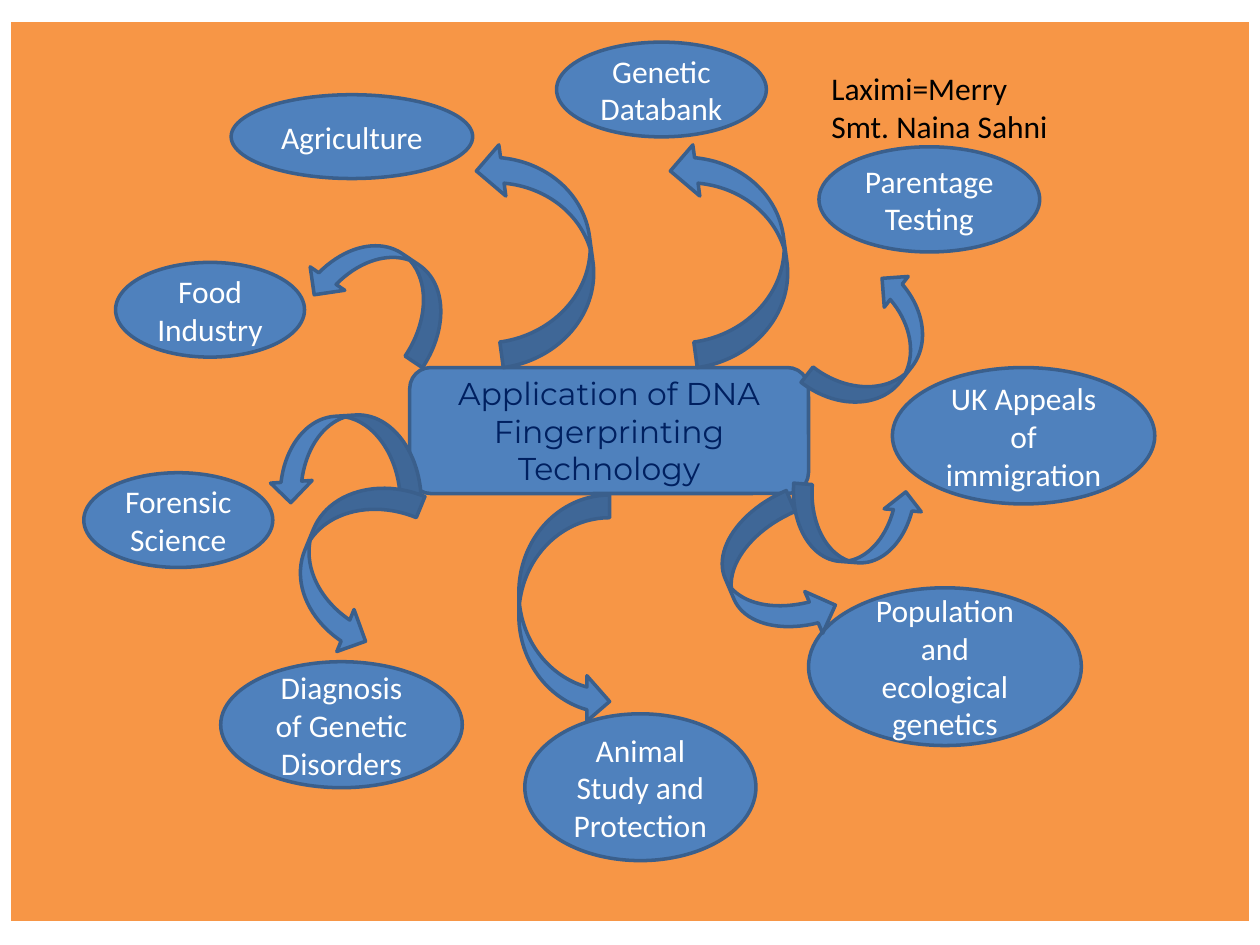
from lxml import etree
from pptx import Presentation
from pptx.dml.color import RGBColor
from pptx.enum.shapes import MSO_SHAPE
from pptx.enum.text import MSO_ANCHOR, MSO_AUTO_SIZE, PP_ALIGN
from pptx.oxml.ns import qn
from pptx.util import Cm, Pt

ELLIPSE = MSO_SHAPE.OVAL
ROUNDED = MSO_SHAPE.ROUNDED_RECTANGLE
CURVED_ARROW = MSO_SHAPE.CURVED_RIGHT_ARROW
MIDDLE = MSO_ANCHOR.MIDDLE
CENTER = PP_ALIGN.CENTER
GROW = MSO_AUTO_SIZE.SHAPE_TO_FIT_TEXT

ORANGE = RGBColor(0xF7, 0x96, 0x46)
BLUE = RGBColor(0x4F, 0x81, 0xBD)
OUTLINE = RGBColor(0x3A, 0x5F, 0x8C)
NAVY = RGBColor(0x00, 0x20, 0x60)
WHITE = RGBColor(0xFF, 0xFF, 0xFF)
BLACK = RGBColor(0x00, 0x00, 0x00)

BORDER_WIDTHS = {"a:lnL": 1, "a:lnR": 1, "a:lnT": 1, "a:lnB": 3}

APPLICATIONS = [
    ("Genetic Databank", (11.22, 0.85, 4.23, 1.91)),
    ("Forensic Science", (1.69, 9.53, 3.81, 1.91)),
    ("Animal Study and Protection", (10.58, 14.39, 4.66, 2.96)),
    ("Food Industry", (2.33, 5.29, 3.81, 1.91)),
    ("Parentage Testing", (16.51, 2.96, 4.45, 2.12)),
    ("UK Appeals of immigration", (17.99, 7.41, 5.29, 2.75)),
    ("Diagnosis of Genetic Disorders", (4.45, 13.34, 4.87, 2.54)),
    ("Population and ecological genetics", (16.3, 11.85, 5.5, 3.18)),
    ("Agriculture", (4.66, 1.91, 4.87, 1.69)),
]

ARROWS = [
    ((6.88, 4.34, 1.68, 3.05), 124),
    ((6.07, 7.7, 1.68, 3.05), 86.3),
    ((6.12, 9.53, 1.83, 3.61), 22.3),
    ((10.46, 9.98, 1.83, 4.62), 0),
    ((14.68, 10.13, 1.83, 2.97), 336.8),
    ((16.51, 9.27, 1.5, 2.64), 274.5),
    ((16.92, 5.46, 1.57, 3.05), 217.9),
    ((13.74, 2.77, 2.08, 4.52), 172.2),
    ((9.83, 2.77, 2.08, 4.52), 172.2),
]


def to_cm(box):
    return [Cm(length) for length in box]


def format_font(paragraph, color, name="Calibri"):
    paragraph.font.name = name
    paragraph.font.size = Pt(18)
    paragraph.font.color.rgb = color


def add_border(cell, tag, width):
    properties = cell._tc.get_or_add_tcPr()
    line = etree.SubElement(properties, qn(tag), w=str(Pt(width)))
    fill = etree.SubElement(line, qn("a:solidFill"))
    etree.SubElement(fill, qn("a:srgbClr"), val=str(WHITE))


def add_panel(slide, box):
    table = slide.shapes.add_table(1, 1, *to_cm(box)).table
    cell = table.cell(0, 0)
    for tag, width in BORDER_WIDTHS.items():
        add_border(cell, tag, width)
    cell.fill.solid()
    cell.fill.fore_color.rgb = ORANGE


def add_blue_shape(slide, kind, box):
    shape = slide.shapes.add_shape(kind, *to_cm(box))
    shape.shadow.inherit = False
    shape.fill.solid()
    shape.fill.fore_color.rgb = BLUE
    shape.line.color.rgb = OUTLINE
    shape.line.width = Pt(2)
    return shape


def add_label(slide, kind, box, text, color, font_name="Calibri"):
    frame = add_blue_shape(slide, kind, box).text_frame
    frame.word_wrap = True
    frame.vertical_anchor = MIDDLE
    paragraph = frame.paragraphs[0]
    paragraph.text = text
    paragraph.alignment = CENTER
    format_font(paragraph, color, font_name)


def add_note(slide, box, text):
    frame = slide.shapes.add_textbox(*to_cm(box)).text_frame
    frame.word_wrap = True
    frame.auto_size = GROW
    frame.text = text
    for paragraph in frame.paragraphs:
        format_font(paragraph, BLACK)


def main():
    presentation = Presentation()
    presentation.slide_width = Cm(25.4)
    presentation.slide_height = Cm(19.05)
    slide = presentation.slides.add_slide(presentation.slide_layouts[6])

    add_panel(slide, (0.21, 0.42, 24.98, 18.2))
    add_label(slide, ROUNDED, (8.26, 7.41, 8.04, 2.54),
              "Application of DNA Fingerprinting Technology", NAVY, "Montserrat")
    for text, box in APPLICATIONS:
        add_label(slide, ELLIPSE, box, text, WHITE)
    for box, angle in ARROWS:
        add_blue_shape(slide, CURVED_ARROW, box).rotation = angle
    add_note(slide, (16.51, 1.27, 5.28, 1.8), "Laximi=Merry\nSmt. Naina Sahni")

    presentation.save("out.pptx")


if __name__ == "__main__":
    main()
